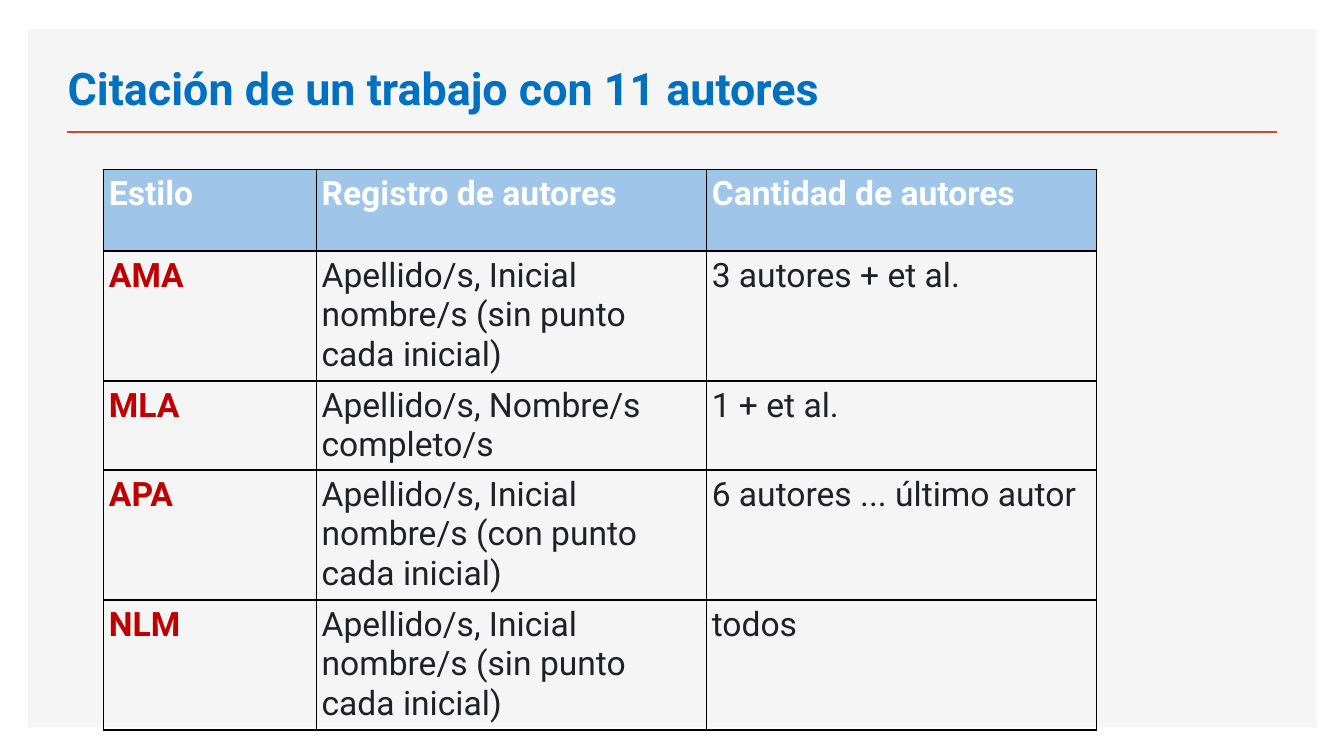
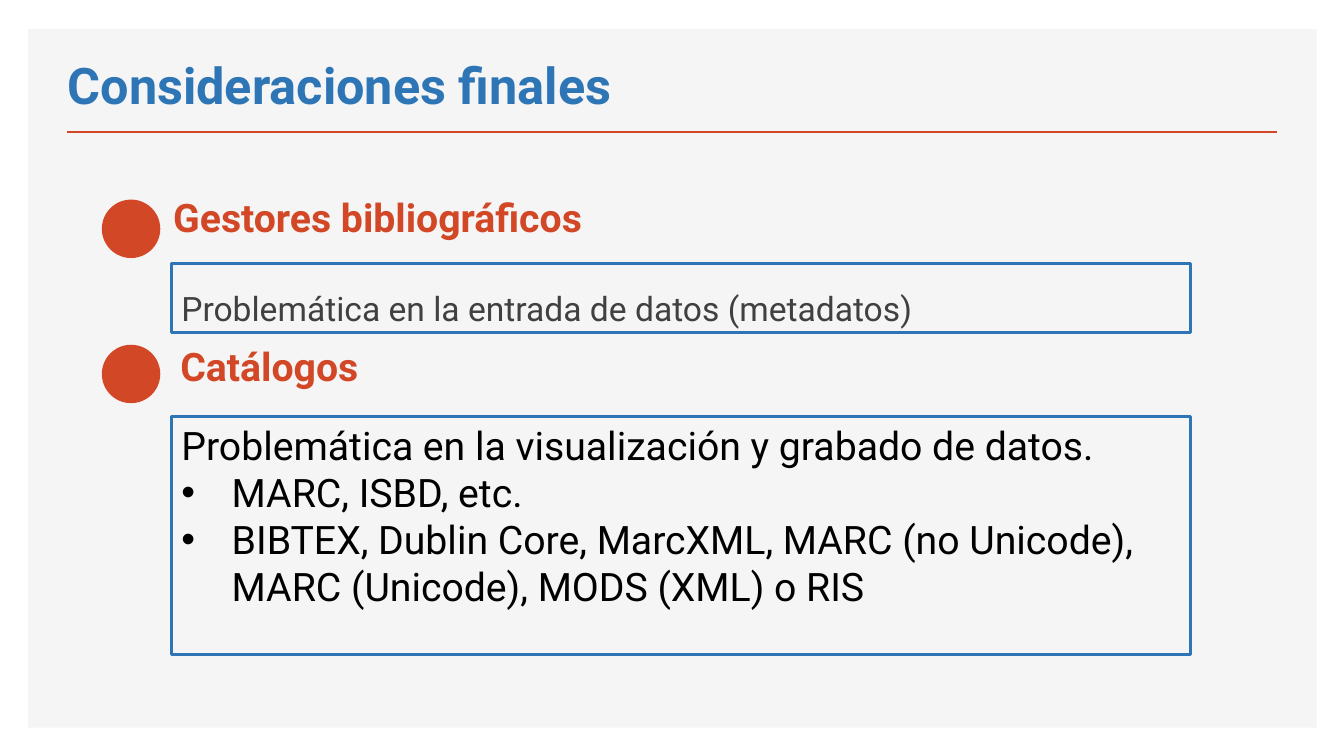
from dataclasses import dataclass

from lxml import etree
from pptx import Presentation
from pptx import util as u
from pptx.dml.color import RGBColor
from pptx.enum import shapes, text
from pptx.oxml import ns

Inches, Pt = u.Inches, u.Pt


@dataclass(frozen=True)
class Theme:
    font: str = "Roboto"
    panel: str = "F5F5F5"
    accent: str = "D24726"
    blue: str = "2E75B6"
    bright: str = "0070C0"
    head: str = "9FC5E8"
    white: str = "FFFFFF"
    black: str = "000000"
    ink: str = "202124"
    grey: str = "404040"
    red: str = "C00000"
    body: int = 24
    large: int = 28
    title: int = 32
    huge: int = 36


T = Theme()


def rgb(code):
    return RGBColor.from_string(code)


def assign(obj, **vals):
    for key, val in vals.items():
        setattr(obj, key, val)


def node(parent, tag, **attrs):
    return etree.SubElement(parent, ns.qn(tag), attrs)


class Deck:
    """Holds the style and the current slide."""

    def __init__(self):
        self.prs = Presentation()
        assign(self.prs, slide_width=Inches(13.33), slide_height=Inches(7.5))
        self.layout = self.prs.slide_layouts[5]
        self.slide = None
        self.framed = False

    def page(self, title, size, color, width):
        self.slide = self.prs.slides.add_slide(self.layout)
        if not self.framed:
            self.frame()
        box = self.slide.shapes.title
        assign(box, left=Inches(0.57), top=Inches(0.49),
               width=Inches(width), height=Inches(0.7))
        self.label(box.text_frame, [title], size, color, bold=True,
                   anchor=text.MSO_ANCHOR.BOTTOM)

    def frame(self):
        """Draw the panel and rule once, then hand them to the layout."""
        panel = self.shape("RECTANGLE", 0.28, 0.29, 12.78, 6.93, fill=T.panel)
        rule = self.rule(0.66, 12.67, 1.31)
        tree = self.layout.shapes.element
        for i, part in enumerate((panel, rule)):
            part.element.xpath(".//p:cNvPr")[0].set("id", str(100 + i))
            tree.insert(2 + i, part.element)
        self.framed = True

    def rule(self, left, right, y):
        line = self.slide.shapes.add_connector(
            shapes.MSO_CONNECTOR.STRAIGHT,
            Inches(left), Inches(y), Inches(right), Inches(y))
        line.line.color.rgb = rgb(T.accent)
        line.line.width = Pt(2)
        node(line.element.spPr, "a:effectLst")
        return line

    def shape(self, kind, x, y, w, h, fill=None, edge=None):
        form = self.slide.shapes.add_shape(
            shapes.MSO_SHAPE[kind], Inches(x), Inches(y), Inches(w), Inches(h))
        form.shadow.inherit = False
        if fill:
            form.fill.solid()
            form.fill.fore_color.rgb = rgb(fill)
        else:
            form.fill.background()
        if edge:
            form.line.color.rgb = rgb(edge)
            form.line.width = Pt(2.25)
        else:
            form.line.fill.background()
        return form

    def label(self, frame, lines, size, color, bold=False, space=None,
              anchor=text.MSO_ANCHOR.TOP):
        assign(frame, word_wrap=True, auto_size=text.MSO_AUTO_SIZE.NONE,
               vertical_anchor=anchor)
        self.fill(frame, lines, size, color, bold, space)

    def fill(self, frame, lines, size, color, bold=False, space=None):
        for i, line in enumerate(lines):
            para = frame.paragraphs[0] if i == 0 else frame.add_paragraph()
            assign(para, alignment=text.PP_ALIGN.LEFT, line_spacing=space)
            run = para.add_run()
            run.text = line
            assign(run.font, name=T.font, size=Pt(size), bold=bold)
            run.font.color.rgb = rgb(color)

    def bullet(self, para):
        props = para._p.get_or_add_pPr()
        gap = Inches(0.5)
        props.set("marL", str(gap))
        props.set("indent", str(-gap))
        node(props, "a:buFont", typeface="Arial")
        node(props, "a:buChar", char="•")

    def box(self, y, h, lines, size, color, space=None):
        form = self.shape("RECTANGLE", 1.7, y, 10.11, h, edge=T.blue)
        self.label(form.text_frame, lines, size, color, space=space)
        for para in form.text_frame.paragraphs[1:]:
            self.bullet(para)

    def topic(self, label, x, y, dot):
        """A round marker with its heading."""
        self.shape("OVAL", 1.01, dot, 0.58, 0.58, fill=T.accent)
        area = self.slide.shapes.add_textbox(
            Inches(x), Inches(y), Inches(9.83), Inches(0.5))
        self.label(area.text_frame, [label], T.large, T.accent, bold=True,
                   space=Pt(18))

    def border(self, cell):
        props = cell._tc.get_or_add_tcPr()
        for i, side in enumerate("LRTB"):
            line = etree.Element(ns.qn("a:ln" + side), w=str(Pt(1)))
            node(node(line, "a:solidFill"), "a:srgbClr", val=T.black)
            props.insert(i, line)

    def table(self, x, y, cols, heights, rows):
        grid = self.slide.shapes.add_table(
            len(rows), len(cols), Inches(x), Inches(y),
            Inches(sum(cols)), Inches(sum(heights))).table
        for col, width in zip(grid.columns, cols):
            col.width = Inches(width)
        for r, (height, row) in enumerate(zip(heights, rows)):
            grid.rows[r].height = Inches(height)
            for c, label in enumerate(row):
                cell = grid.cell(r, c)
                pad = Inches(0.05)
                assign(cell, margin_left=pad, margin_right=pad,
                       margin_top=pad, margin_bottom=pad,
                       vertical_anchor=text.MSO_ANCHOR.TOP)
                if r == 0:
                    cell.fill.solid()
                    cell.fill.fore_color.rgb = rgb(T.head)
                else:
                    cell.fill.background()
                color = T.white if r == 0 else T.red if c == 0 else T.ink
                self.fill(cell.text_frame, [label], T.body, color,
                          bold=r == 0 or c == 0)
                self.border(cell)


def main():
    deck = Deck()

    # Citation styles compared
    deck.page("Citación de un trabajo con 11 autores", T.title, T.bright, 11.88)
    plain = "Apellido/s, Inicial nombre/s (sin punto cada inicial)"
    deck.table(1.03, 1.68, [2.11, 3.87, 3.87], [0.81, 1.29, 0.81, 1.29, 1.29], [
        ("Estilo", "Registro de autores", "Cantidad de autores"),
        ("AMA", plain, "3 autores + et al."),
        ("MLA", "Apellido/s, Nombre/s completo/s", "1 + et al."),
        ("APA", "Apellido/s, Inicial nombre/s (con punto cada inicial)",
         "6 autores ... último autor"),
        ("NLM", plain, "todos"),
    ])

    # Closing remarks
    deck.page("Consideraciones finales", T.huge, T.blue, 8.57)
    deck.topic("Gestores bibliográficos", 1.62, 2.09, 1.98)
    deck.box(2.61, 0.69, ["Problemática en la entrada de datos (metadatos)"],
             T.body, T.grey, space=1.5)
    deck.topic("Catálogos", 1.69, 3.56, 3.42)
    deck.box(4.13, 2.36, [
        "Problemática en la visualización y grabado de datos.",
        "MARC, ISBD, etc.",
        "BIBTEX, Dublin Core, MarcXML, MARC (no Unicode), "
        "MARC (Unicode), MODS (XML) o RIS",
    ], T.large, T.black)

    deck.prs.save("out.pptx")


if __name__ == "__main__":
    main()
